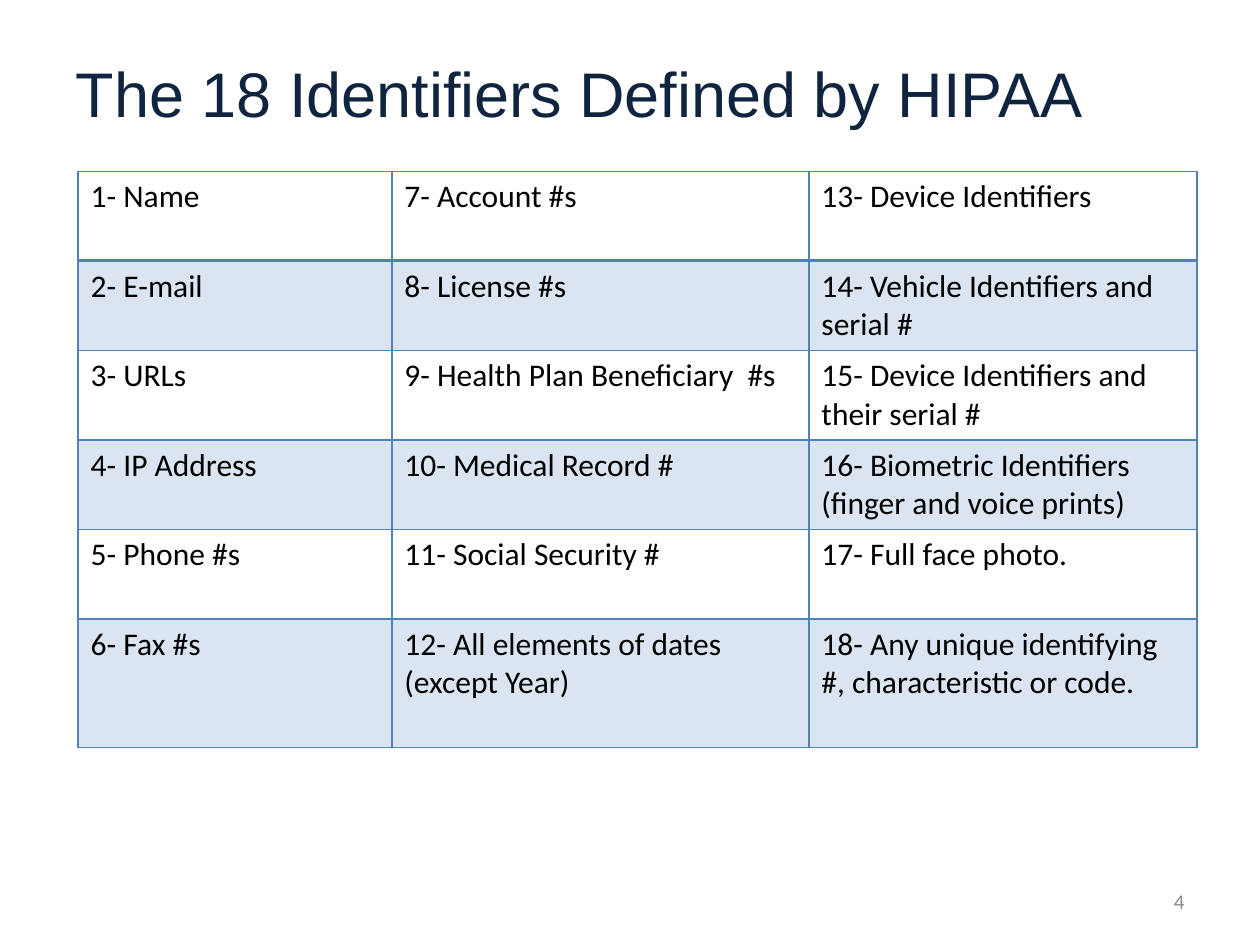
from lxml import etree
from pptx import Presentation, util as u
from pptx.dml.color import RGBColor
from pptx.enum import text
from pptx.oxml.ns import qn

NAVY = RGBColor(0x0F, 0x24, 0x3E)
BLUE = RGBColor(0x4F, 0x81, 0xBD)
BLACK = RGBColor(0, 0, 0)
GREY = RGBColor(0x8C, 0x8C, 0x8C)

COLUMNS = [2.49, 3.31, 3.08]
ROWS = [0.71] * 5 + [1.02]
# Listed in numbered order: down each column, then across
IDENTIFIERS = [
    "Name", "E-mail", "URLs", "IP Address", "Phone #s", "Fax #s",
    "Account #s", "License #s", "Health Plan Beneficiary  #s",
    "Medical Record #", "Social Security #",
    "All elements of dates\v(except Year)",
    "Device Identifiers", "Vehicle Identifiers and serial #",
    "Device Identifiers and their serial #",
    "Biometric Identifiers (finger and voice prints)",
    "Full face photo.",
    "Any unique identifying #, characteristic or code.",
]


def write(tf, words, color, align=text.PP_ALIGN.LEFT, **formats):
    tf.text = words
    p = tf.paragraphs[0]
    p.alignment = align
    for r in p.runs:
        r.font.color.rgb = color
        for name, value in formats.items():
            setattr(r.font, name, value)


def place(s, box):
    s.left, s.top, s.width, s.height = (u.Inches(v) for v in box)


def add_title(slide, box):
    s = slide.shapes.title
    place(s, box)
    tf = s.text_frame
    tf.auto_size = text.MSO_AUTO_SIZE.NONE
    tf.vertical_anchor = text.MSO_ANCHOR.MIDDLE
    write(tf, "The 18 Identifiers Defined by HIPAA", NAVY,
          name="Arial", size=u.Pt(36))


def tint(cell):
    """Fill a cell with one fifth of the border blue."""
    cell.fill.solid()
    cell.fill.fore_color.rgb = BLUE
    color = cell._tc.tcPr.find(".//" + qn("a:srgbClr"))
    etree.SubElement(color, qn("a:alpha"), val="20000")


def set_borders(cell, widths):
    """Draw left, right, top and bottom borders, widths in points."""
    pr = cell._tc.get_or_add_tcPr()
    for i, (side, width) in enumerate(zip("LRTB", widths)):
        ln = etree.Element(qn("a:ln" + side), w=str(u.Pt(width)))
        fill = etree.SubElement(ln, qn("a:solidFill"))
        etree.SubElement(fill, qn("a:srgbClr"), val=str(BLUE))
        pr.insert(i, ln)


def add_identifiers(slide, left, top):
    box = (u.Inches(v) for v in (left, top, sum(COLUMNS), sum(ROWS)))
    table = slide.shapes.add_table(len(ROWS), len(COLUMNS), *box).table
    table.first_row = table.horz_banding = False
    for column, width in zip(table.columns, COLUMNS):
        column.width = u.Inches(width)
    for row, height in zip(table.rows, ROWS):
        row.height = u.Inches(height)
    for i, words in enumerate(IDENTIFIERS):
        col, row = divmod(i, len(ROWS))
        cell = table.cell(row, col)
        write(cell.text_frame, f"{i + 1}- {words}", BLACK,
              name="Calibri", size=u.Pt(18))
        if row % 2:
            tint(cell)
        else:
            cell.fill.background()
        # The rule under the first row is heavier
        set_borders(cell, (1, 1, 2 if row == 1 else 1, 2 if row == 0 else 1))


def add_page_number(slide, box):
    s = slide.shapes.add_textbox(0, 0, 0, 0)
    place(s, box)
    tf = s.text_frame
    tf.word_wrap = True
    tf.vertical_anchor = text.MSO_ANCHOR.MIDDLE
    write(tf, "4", GREY, text.PP_ALIGN.RIGHT, name="Calibri", size=u.Pt(12))


def main():
    prs = Presentation()
    prs.slide_width, prs.slide_height = u.Inches(10), u.Inches(7.5)
    slide = prs.slides.add_slide(prs.slide_layouts.get_by_name("Title Only"))
    add_title(slide, (0.5, 0.3, 9, 0.87))
    add_identifiers(slide, 0.62, 1.36)
    add_page_number(slide, (7.17, 6.95, 2.33, 0.4))
    prs.save("out.pptx")


if __name__ == "__main__":
    main()
